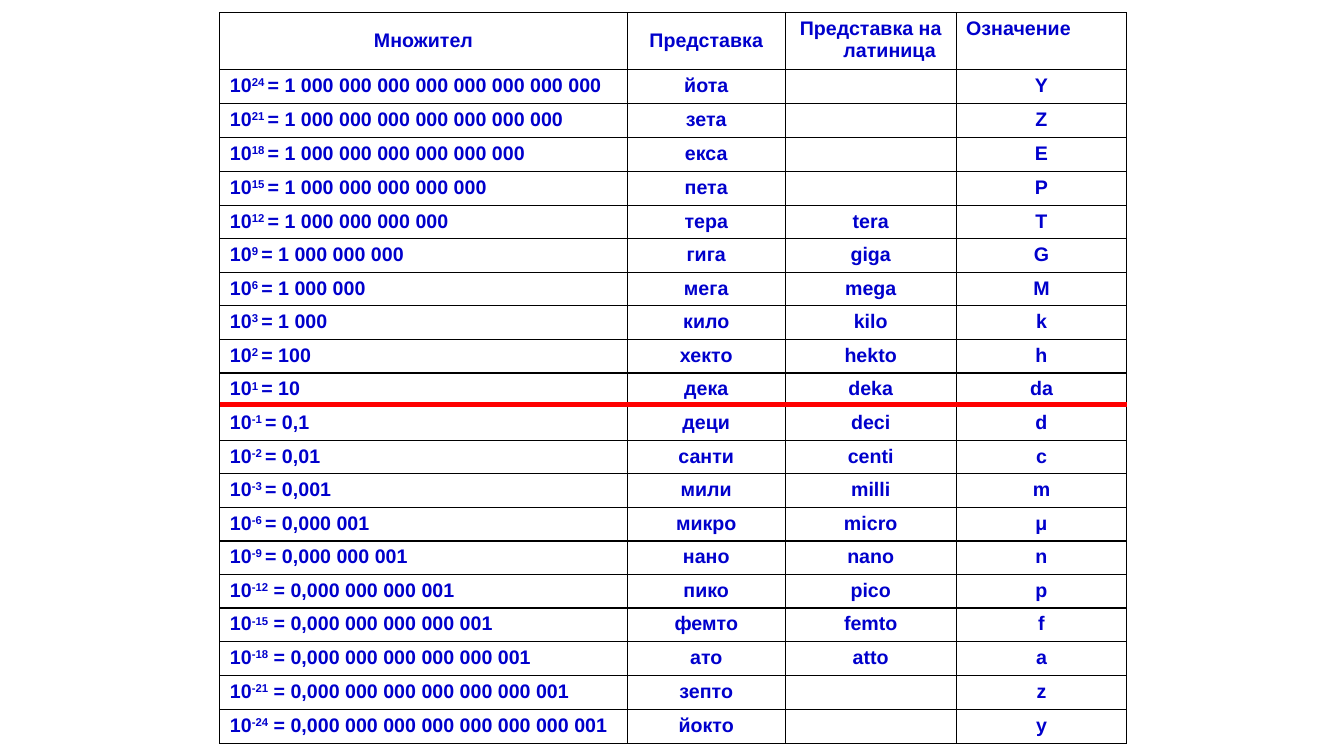
from lxml import etree
from pptx import Presentation
from pptx.dml.color import RGBColor
from pptx.enum import shapes, text
from pptx.oxml.ns import qn
from pptx.util import Pt

COLORS = {"text": "0000CC", "border": "000000", "divider": "FF0000"}
HEADERS = ["Множител", "Представка", "Представка на латиница", "Означение"]
PREFIXES = [
    (24, "йота", "", "Y"),
    (21, "зета", "", "Z"),
    (18, "екса", "", "E"),
    (15, "пета", "", "P"),
    (12, "тера", "tera", "T"),
    (9, "гига", "giga", "G"),
    (6, "мега", "mega", "M"),
    (3, "кило", "kilo", "k"),
    (2, "хекто", "hekto", "h"),
    (1, "дека", "deka", "da"),
    (-1, "деци", "deci", "d"),
    (-2, "санти", "centi", "c"),
    (-3, "мили", "milli", "m"),
    (-6, "микро", "micro", "μ"),
    (-9, "нано", "nano", "n"),
    (-12, "пико", "pico", "p"),
    (-15, "фемто", "femto", "f"),
    (-18, "ато", "atto", "а"),
    (-21, "зепто", "", "z"),
    (-24, "йокто", "", "y"),
]
LEFT, TOP = 157, 9.1
COLUMN_WIDTHS = [291, 113, 122, 122]
HEADER_HEIGHT, ROW_HEIGHT = 40.4, 24
FONT_SIZE = 14


def write(p, content, size=FONT_SIZE, color="text", superscript=False):
    r = p.add_run()
    r.text = content
    r.font.name = "Arial"
    r.font.size = Pt(size)
    r.font.bold = True
    r.font.color.rgb = RGBColor.from_string(COLORS[color])
    if superscript:
        r._r.get_or_add_rPr().set("baseline", "30000")


def power_value(exponent):
    """Write 10 to the exponent in full, with digits grouped by three."""
    if exponent > 0:
        return f"{10 ** exponent:,}".replace(",", " ")
    decimals = "1".zfill(-exponent)
    return "0," + " ".join(decimals[i:i + 3] for i in range(0, len(decimals), 3))


prs = Presentation()
prs.slide_width, prs.slide_height = Pt(960), Pt(540)
s = prs.slides.add_slide(prs.slide_layouts[6])

rows = [HEADERS] + PREFIXES
width = sum(COLUMN_WIDTHS)
height = HEADER_HEIGHT + ROW_HEIGHT * len(PREFIXES)
table = s.shapes.add_table(len(rows), len(HEADERS), Pt(LEFT), Pt(TOP), Pt(width), Pt(height)).table
table.first_row = table.horz_banding = False
for column, column_width in zip(table.columns, COLUMN_WIDTHS):
    column.width = Pt(column_width)

for i, row in enumerate(rows):
    table.rows[i].height = Pt(ROW_HEIGHT if i else HEADER_HEIGHT)
    for j, value in enumerate(row):
        cell = table.cell(i, j)
        tcPr = cell._tc.get_or_add_tcPr()
        for side in ("lnL", "lnR", "lnT", "lnB"):
            ln = etree.SubElement(tcPr, qn(f"a:{side}"), w=str(Pt(1)))
            fill = etree.SubElement(ln, qn("a:solidFill"))
            etree.SubElement(fill, qn("a:srgbClr"), val=COLORS["border"])
        cell.fill.background()
        if i == 0 and j < 2:
            cell.vertical_anchor = text.MSO_ANCHOR.MIDDLE

        p = cell.text_frame.paragraphs[0]
        pPr = p._p.get_or_add_pPr()
        pPr.set("marL", str(Pt(27)))
        pPr.set("indent", str(-Pt(27)))
        left_aligned = j == 3 if i == 0 else j == 0
        p.alignment = text.PP_ALIGN.LEFT if left_aligned else text.PP_ALIGN.CENTER
        if i and j == 0:
            # The space is raised too, except in the narrow rows from -12 down
            gap = ("", " ") if value <= -12 else (" ", "")
            write(p, "10")
            write(p, f"{value}{gap[0]}", superscript=True)
            write(p, f"{gap[1]}= {power_value(value)}")
        elif value:
            write(p, value)
        else:
            # Keeps an empty cell from stretching its row
            etree.SubElement(p._p, qn("a:endParaRPr"), sz=str(FONT_SIZE * 100))

divider_y = Pt(288.75)
divider = s.shapes.add_connector(
    shapes.MSO_CONNECTOR.STRAIGHT, Pt(LEFT), divider_y, Pt(LEFT + width), divider_y)
divider.line.color.rgb = RGBColor.from_string(COLORS["divider"])
divider.line.width = Pt(3.5)
etree.SubElement(divider._element.spPr, qn("a:effectLst"))

prs.save("out.pptx")
